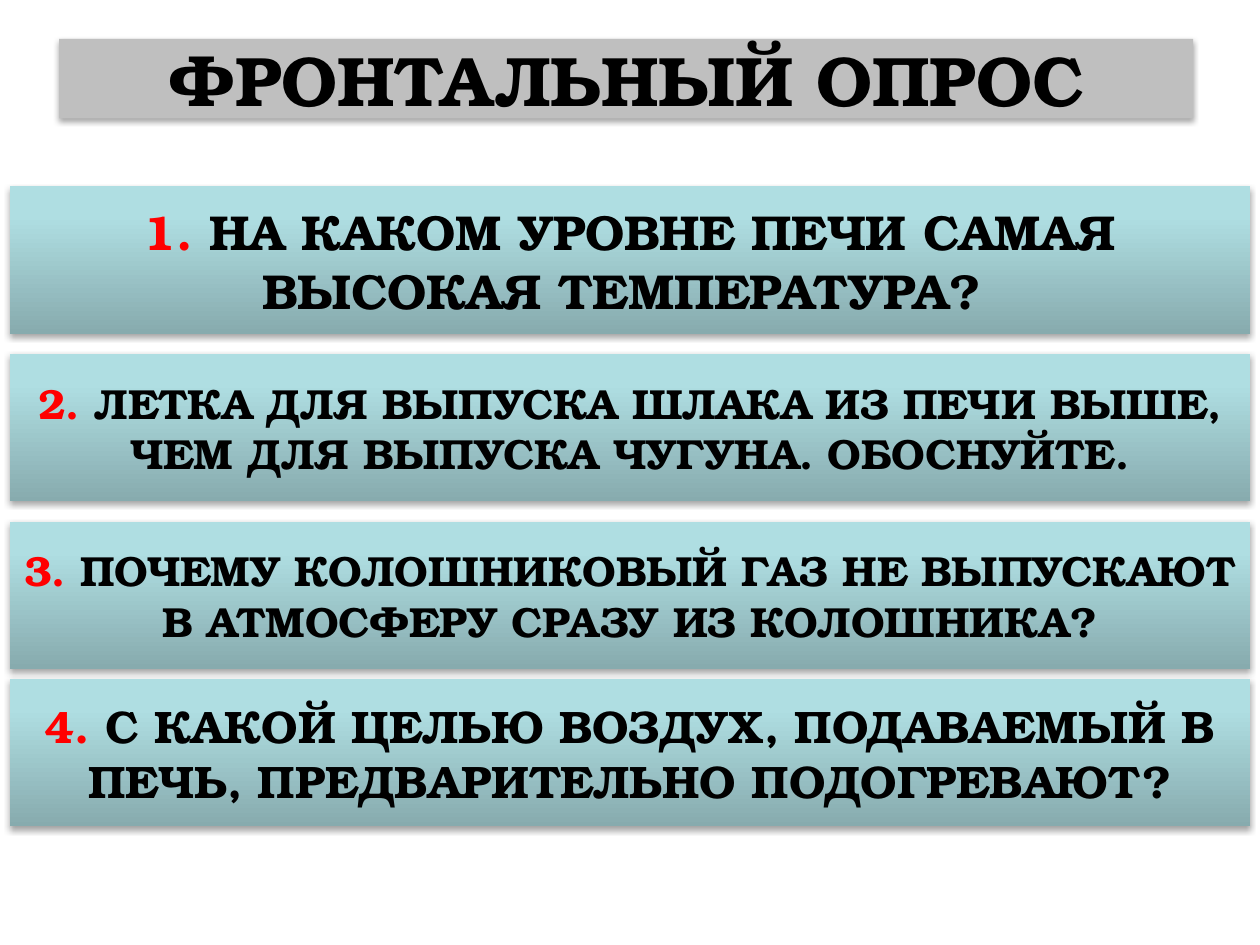
from lxml.etree import SubElement
from pptx import Presentation
from pptx.dml.color import RGBColor
from pptx.enum.shapes import MSO_SHAPE as Shape
from pptx.enum.text import MSO_ANCHOR as Anchor, PP_ALIGN as Align
from pptx.oxml.ns import qn
from pptx.util import Inches, Pt

FONT = "TeX Gyre Bonum"
BLACK, RED, GREY = "000000", "FF0000", "BFBFBF"
TEAL_STOPS = [(0, "87ABAE"), (80, "AFDEE2"), (100, "AFE0E4")]

# Share of the slide's width and height
CARD_LEFT, CARD_WIDTH, CARD_HEIGHT = 0.008, 0.984, 0.156

# Top in inches, text size, number, question
QUESTIONS = [
    (1.48, 28, "1.", " НА КАКОМ УРОВНЕ ПЕЧИ САМАЯ ВЫСОКАЯ ТЕМПЕРАТУРА? "),
    (2.81, 24, "2. ", "ЛЕТКА ДЛЯ ВЫПУСКА ШЛАКА ИЗ ПЕЧИ ВЫШЕ, "
                      "ЧЕМ ДЛЯ ВЫПУСКА ЧУГУНА. ОБОСНУЙТЕ."),
    (4.14, 24, "3.", " ПОЧЕМУ КОЛОШНИКОВЫЙ ГАЗ НЕ ВЫПУСКАЮТ "
                     "В АТМОСФЕРУ СРАЗУ ИЗ КОЛОШНИКА?"),
    (5.39, 26, "4.", " С КАКОЙ ЦЕЛЬЮ ВОЗДУХ, ПОДАВАЕМЫЙ В ПЕЧЬ, "
                     "ПРЕДВАРИТЕЛЬНО ПОДОГРЕВАЮТ?"),
]


def color(value):
    return RGBColor.from_string(value)


def add_element(parent, tag, **attributes):
    values = {name: str(value) for name, value in attributes.items()}
    return SubElement(parent, qn(tag), values)


def add_shadow(shape):
    """Soft shadow falling straight down."""
    shape.shadow.inherit = False
    effects = shape._element.spPr.find(qn("a:effectLst"))
    shadow = add_element(effects, "a:outerShdw", blurRad=Pt(3.1), dist=Pt(1.8),
                         dir=90 * 60000, rotWithShape=0)
    shade = add_element(shadow, "a:srgbClr", val=BLACK)
    add_element(shade, "a:alpha", val=35000)


def fill_gradient(shape, stops):
    """Vertical gradient, first stop at the bottom."""
    shape.fill.gradient()
    shape.fill.gradient_angle = 90
    stop_list = shape._element.spPr.find(".//" + qn("a:gsLst"))
    for stop in list(stop_list):
        stop_list.remove(stop)
    for position, value in stops:
        stop = add_element(stop_list, "a:gs", pos=position * 1000)
        add_element(stop, "a:srgbClr", val=value)


def add_run(paragraph, text, size, value):
    run = paragraph.add_run()
    run.text = text
    font = run.font
    font.name, font.size, font.bold = FONT, Pt(size), True
    font.color.rgb = color(value)
    # Thin black outline, which must precede the fill
    properties = run._r.get_or_add_rPr()
    outline = add_element(properties, "a:ln", w=Pt(0.71))
    add_element(add_element(outline, "a:solidFill"), "a:srgbClr", val=BLACK)
    properties.insert(0, outline)


def add_panel(slide, left, top, width, height, size, runs):
    """Shadowed rectangle with centred text made of (text, colour) runs."""
    shape = slide.shapes.add_shape(Shape.RECTANGLE, left, top, width, height)
    shape.line.fill.background()
    add_shadow(shape)
    frame = shape.text_frame
    frame.word_wrap = True
    frame.vertical_anchor = Anchor.MIDDLE
    paragraph = frame.paragraphs[0]
    paragraph.alignment = Align.CENTER
    for text, value in runs:
        add_run(paragraph, text, size, value)
    return shape


def main():
    presentation = Presentation()
    presentation.slide_width, presentation.slide_height = Inches(10), Inches(7.5)
    slide_width, slide_height = presentation.slide_width, presentation.slide_height
    slide = presentation.slides.add_slide(presentation.slide_layouts[6])

    # Question cards
    for top, size, number, question in QUESTIONS:
        card = add_panel(slide, int(CARD_LEFT * slide_width), Inches(top),
                         int(CARD_WIDTH * slide_width),
                         int(CARD_HEIGHT * slide_height),
                         size, [(number, RED), (question, BLACK)])
        fill_gradient(card, TEAL_STOPS)

    # Title bar
    title = add_panel(slide, Inches(0.47), Inches(0.31), Inches(9), Inches(0.63),
                      40, [("ФРОНТАЛЬНЫЙ ОПРОС", BLACK)])
    title.fill.solid()
    title.fill.fore_color.rgb = color(GREY)

    presentation.save("out.pptx")


if __name__ == "__main__":
    main()
